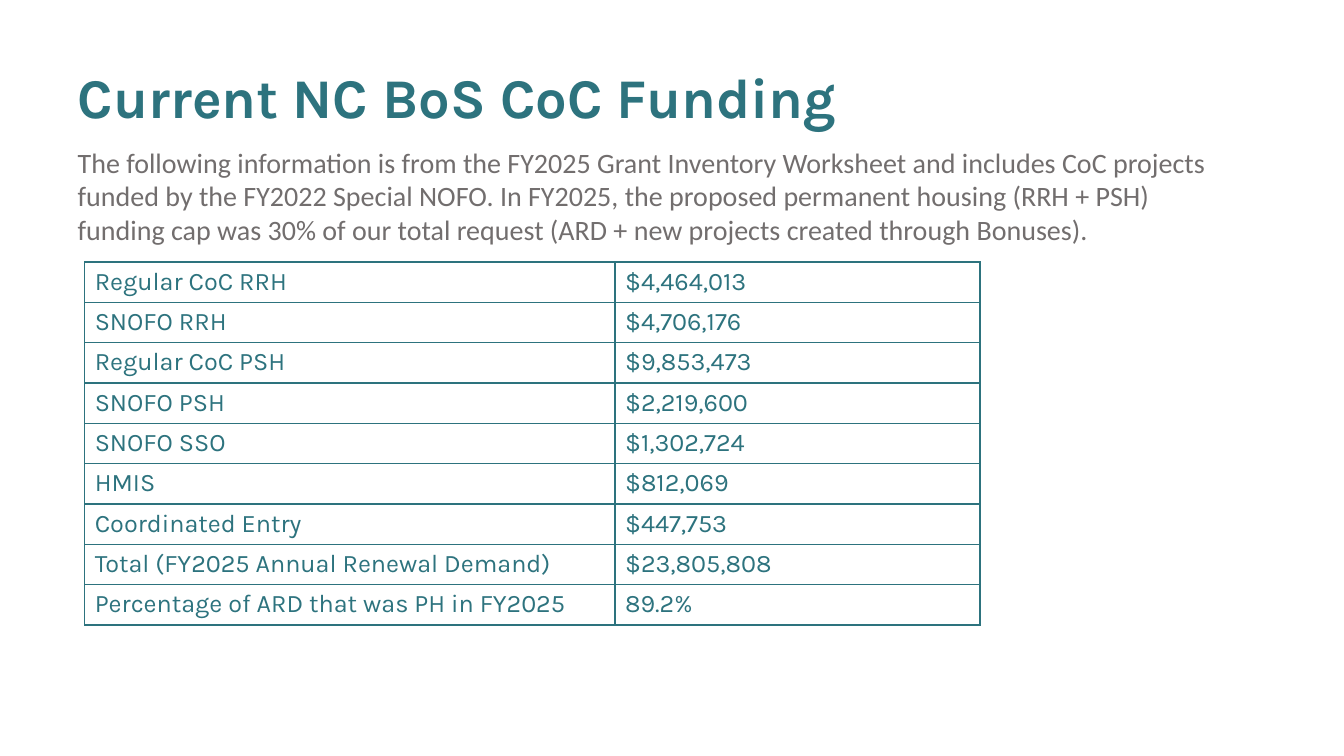
from dataclasses import dataclass

from lxml.etree import SubElement
from pptx import Presentation
from pptx.dml.color import RGBColor
from pptx.enum.text import MSO_ANCHOR, MSO_AUTO_SIZE, PP_ALIGN
from pptx.oxml.ns import qn
from pptx.util import Inches, Pt

TITLE = "Current NC BoS CoC Funding"
INTRO = (
    "The following information is from the FY2025 Grant Inventory Worksheet and "
    "includes CoC projects funded by the FY2022 Special NOFO. In FY2025, the "
    "proposed permanent housing (RRH + PSH) funding cap was 30% of our total "
    "request (ARD + new projects created through Bonuses)."
)
FUNDING = [
    ("Regular CoC RRH", "$4,464,013"),
    ("SNOFO RRH", "$4,706,176"),
    ("Regular CoC PSH", "$9,853,473"),
    ("SNOFO PSH", "$2,219,600"),
    ("SNOFO SSO", "$1,302,724"),
    ("HMIS", "$812,069"),
    ("Coordinated Entry", "$447,753"),
    ("Total (FY2025 Annual Renewal Demand)", "$23,805,808"),
    ("Percentage of ARD that was PH in FY2025", "89.2%"),
]


@dataclass(frozen=True)
class Theme:
    teal: str = "2D737E"
    gray: str = "726E6E"
    heading_font: str = "Karla"
    body_font: str = "Calibri"
    title_size: int = 40
    intro_size: int = 20
    table_size: int = 18
    border: float = 1


THEME = Theme()
SLIDE_W, SLIDE_H = 13.33, 7.5
LEFT, TITLE_TOP, TITLE_H = 0.67, 0.27, 1.12
TITLE_W, INTRO_W, INTRO_H = 11, 11.44, 5.37
TABLE_LEFT, TABLE_TOP, ROW_H = 0.84, 2.6, 0.4
COLUMNS = (5.26, 3.62)


def place(s, left, top, width, height):
    s.left, s.top, s.width, s.height = map(Inches, (left, top, width, height))


def write(p, text, font, size, color, bold=False):
    p.alignment = PP_ALIGN.LEFT
    r = p.add_run()
    r.text = text
    r.font.name, r.font.size, r.font.bold = font, Pt(size), bold
    r.font.color.rgb = RGBColor.from_string(color)


def outline(cell):
    tcPr = cell._tc.get_or_add_tcPr()
    for i, side in enumerate(("lnL", "lnR", "lnT", "lnB")):
        ln = SubElement(tcPr, qn(f"a:{side}"), w=str(Pt(THEME.border)))
        fill = SubElement(ln, qn("a:solidFill"))
        SubElement(fill, qn("a:srgbClr"), val=THEME.teal)
        tcPr.insert(i, ln)


def add_title(slide):
    s = slide.shapes.title
    place(s, LEFT, TITLE_TOP, TITLE_W, TITLE_H)
    tf = s.text_frame
    tf.auto_size = MSO_AUTO_SIZE.NONE
    tf.vertical_anchor = MSO_ANCHOR.BOTTOM
    tf.margin_bottom = Inches(0.1)
    write(tf.paragraphs[0], TITLE, THEME.heading_font, THEME.title_size, THEME.teal, True)


def add_intro(slide):
    s = slide.placeholders[1]
    place(s, LEFT, TITLE_TOP + TITLE_H, INTRO_W, INTRO_H)
    tf = s.text_frame
    tf.auto_size = MSO_AUTO_SIZE.NONE
    p = tf.paragraphs[0]
    pPr = p._p.get_or_add_pPr()
    pPr.set("marL", "0")
    pPr.set("indent", "0")
    SubElement(pPr, qn("a:buNone"))
    p.space_before = Pt(0)
    write(p, INTRO, THEME.body_font, THEME.intro_size, THEME.gray)


def add_funding_table(slide):
    frame = slide.shapes.add_table(
        len(FUNDING), len(COLUMNS), Inches(TABLE_LEFT), Inches(TABLE_TOP),
        Inches(sum(COLUMNS)), Inches(ROW_H * len(FUNDING)),
    )
    table = frame.table
    table.first_row = table.horz_banding = False
    for column, width in zip(table.columns, COLUMNS):
        column.width = Inches(width)
    for i, values in enumerate(FUNDING):
        for j, value in enumerate(values):
            cell = table.cell(i, j)
            cell.fill.background()
            outline(cell)
            write(cell.text_frame.paragraphs[0], value, THEME.heading_font,
                  THEME.table_size, THEME.teal)


def main():
    prs = Presentation()
    prs.slide_width, prs.slide_height = Inches(SLIDE_W), Inches(SLIDE_H)
    slide = prs.slides.add_slide(prs.slide_layouts[1])
    add_title(slide)
    add_intro(slide)
    add_funding_table(slide)
    prs.save("out.pptx")


if __name__ == "__main__":
    main()
